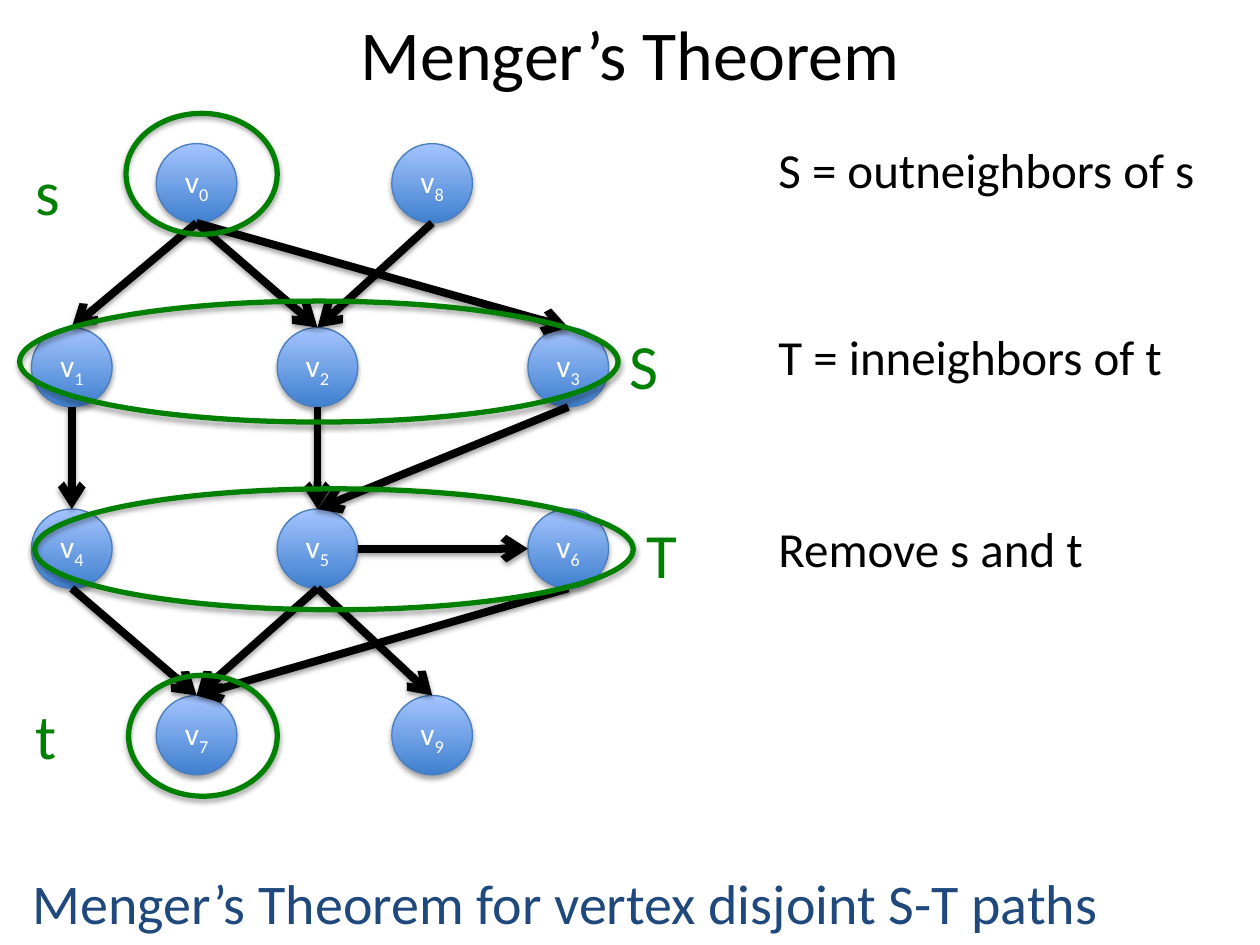
from dataclasses import dataclass

from lxml import etree
from pptx import Presentation
from pptx.dml.color import RGBColor
from pptx.enum.shapes import MSO_CONNECTOR, MSO_SHAPE
from pptx.enum.text import MSO_ANCHOR, PP_ALIGN
from pptx.oxml.ns import qn
from pptx.util import Inches, Pt

OVAL = MSO_SHAPE.OVAL
STRAIGHT = MSO_CONNECTOR.STRAIGHT
MIDDLE, TOP = MSO_ANCHOR.MIDDLE, MSO_ANCHOR.TOP
CENTER, LEFT = PP_ALIGN.CENTER, PP_ALIGN.LEFT


@dataclass(frozen=True)
class Theme:
    font: str = "Calibri"
    ink: str = "000000"
    vertex_text: str = "FFFFFF"
    vertex_dark: str = "3F80CE"
    vertex_light: str = "A4C4FF"
    vertex_line: str = "4B7EBC"
    group: str = "008000"
    claim: str = "1F497D"
    title_size: int = 40
    group_size: int = 36
    claim_size: int = 32
    note_size: int = 28
    vertex_size: int = 18


THEME = Theme()
VERTEX_W, VERTEX_H = 0.64, 0.63
RING_THICKNESS = 0.96
OUTER_COLUMNS = (0.99, 2.86)
INNER_COLUMNS = (0, 1.95, 3.94)
ROWS = (
    (0, OUTER_COLUMNS, "08"),
    (1.46, INNER_COLUMNS, "123"),
    (2.9, INNER_COLUMNS, "456"),
    (4.38, OUTER_COLUMNS, "79"),
)
EDGES = ("01", "02", "03", "82", "14", "25", "35", "56", "47", "57", "67", "59")
GROUPS = (
    ("t", 1.61, 5.84, 1.18, 0.18, 5.48),
    ("s", 1.6, 1.38, 1.2, 0.18, 1.16),
    ("S", 2.53, 2.87, 4.75, 4.9, 2.54),
    ("T", 2.65, 4.36, 4.75, 5.03, 4.04),
)
NOTES = (
    ("S = outneighbors of s", 0, 3.92),
    ("T = inneighbors of t", 1.48, 3.65),
    ("Remove s and t", 3.01, 2.95),
)


def rgb(value):
    return RGBColor.from_string(value)


def write(shape, text, *, size, color, align=LEFT, anchor=TOP, subscript=""):
    frame = shape.text_frame
    frame.word_wrap = True
    frame.vertical_anchor = anchor
    paragraph = frame.paragraphs[0]
    paragraph.alignment = align
    for part in filter(None, (text, subscript)):
        run = paragraph.add_run()
        run.text = part
        run.font.name = THEME.font
        run.font.size = Pt(size)
        run.font.color.rgb = rgb(color)
    if subscript:
        run._r.get_or_add_rPr().set("baseline", "-25000")


def add_text(slide, box, text, **style):
    write(slide.shapes.add_textbox(*map(Inches, box)), text, **style)


def add_shadow(shape, distance, opacity):
    effects = etree.SubElement(shape._element.spPr, qn("a:effectLst"))
    shadow = etree.SubElement(
        effects, qn("a:outerShdw"), blurRad=str(Pt(3.1)), dist=str(Pt(distance)),
        dir="5400000", rotWithShape="0")
    color = etree.SubElement(shadow, qn("a:srgbClr"), val=THEME.ink)
    etree.SubElement(color, qn("a:alpha"), val=str(opacity * 1000))


def add_oval(slide, box, color, width):
    oval = slide.shapes.add_shape(OVAL, *map(Inches, box))
    oval.line.color.rgb = rgb(color)
    oval.line.width = Pt(width)
    add_shadow(oval, 1.8, 35)
    return oval


def add_vertex(slide, left, top, number):
    vertex = add_oval(slide, (left, top, VERTEX_W, VERTEX_H), THEME.vertex_line, 0.75)
    vertex.fill.gradient()
    vertex.fill.gradient_angle = 90
    for stop, color in zip(vertex.fill.gradient_stops,
                           (THEME.vertex_dark, THEME.vertex_light)):
        stop.color.rgb = rgb(color)
    for stop, position in zip(vertex.fill.gradient_stops, (0, 1)):
        stop.position = position
    write(vertex, "v", subscript=number, size=THEME.vertex_size,
          color=THEME.vertex_text, align=CENTER, anchor=MIDDLE)


def add_edge(slide, start, end):
    (x1, y1), (x2, y2) = start, end
    if y1 == y2:
        points = (x1 + VERTEX_W, y1 + VERTEX_H / 2, x2, y2 + VERTEX_H / 2)
    else:
        points = (x1 + VERTEX_W / 2, y1 + VERTEX_H, x2 + VERTEX_W / 2, y2)
    edge = slide.shapes.add_connector(STRAIGHT, *map(Inches, points))
    edge.line.color.rgb = rgb(THEME.ink)
    edge.line.width = Pt(4.5)
    etree.SubElement(edge.line._get_or_add_ln(), qn("a:tailEnd"), type="arrow")
    add_shadow(edge, 1.6, 38)


def add_graph(slide, left, top):
    places = {
        number: (left + column, top + row)
        for row, columns, numbers in ROWS
        for column, number in zip(columns, numbers)
    }
    for number, place in places.items():
        add_vertex(slide, *place, number)
    for start, end in EDGES:
        add_edge(slide, places[start], places[end])


def add_group(slide, name, center_x, center_y, length, label_left, label_top):
    box = (center_x - RING_THICKNESS / 2, center_y - length / 2, RING_THICKNESS, length)
    ring = add_oval(slide, box, THEME.group, 3)
    ring.rotation = 90
    ring.fill.background()
    add_text(slide, (label_left, label_top, 1.38, 0.71), name,
             size=THEME.group_size, color=THEME.group)


def add_notes(slide, left, top):
    for text, offset, width in NOTES:
        add_text(slide, (left, top + offset, width, 0.57), text,
                 size=THEME.note_size, color=THEME.ink)


def add_title(slide, left, top, width, height):
    title = slide.shapes.title
    title.left, title.top = Inches(left), Inches(top)
    title.width, title.height = Inches(width), Inches(height)
    write(title, "Menger’s Theorem", size=THEME.title_size, color=THEME.ink,
          align=CENTER, anchor=MIDDLE)


def main():
    deck = Presentation()
    deck.slide_width, deck.slide_height = Inches(10), Inches(7.5)
    slide = deck.slides.add_slide(deck.slide_layouts.get_by_name("Title Only"))
    add_title(slide, 0.5, 0.06, 9, 0.71)
    add_graph(slide, 0.25, 1.14)
    for group in GROUPS:
        add_group(slide, *group)
    add_notes(slide, 6.08, 1.06)
    add_text(slide, (0.16, 6.84, 9.55, 0.64),
             "Menger’s Theorem for vertex disjoint S-T paths",
             size=THEME.claim_size, color=THEME.claim)
    deck.save("out.pptx")


if __name__ == "__main__":
    main()
